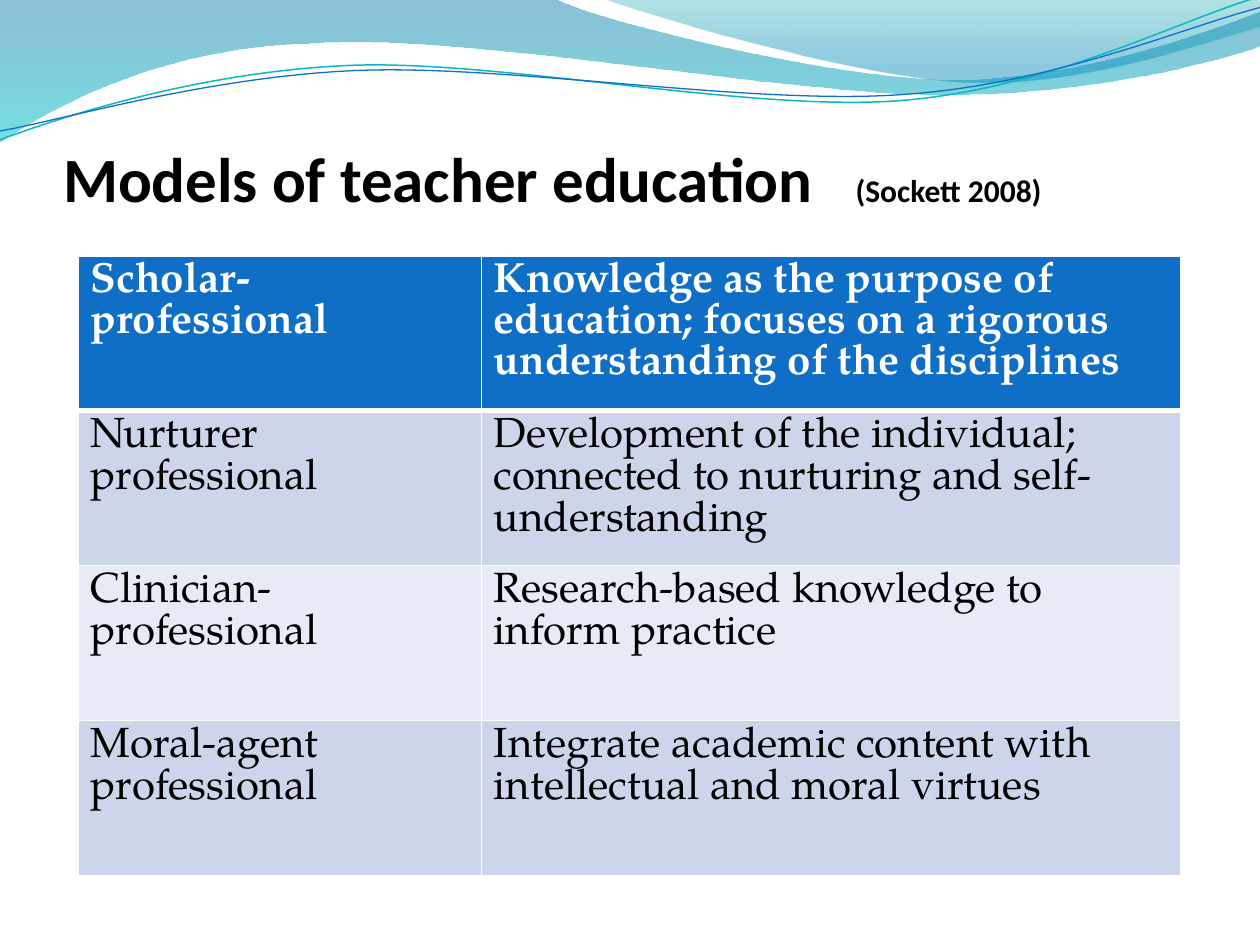
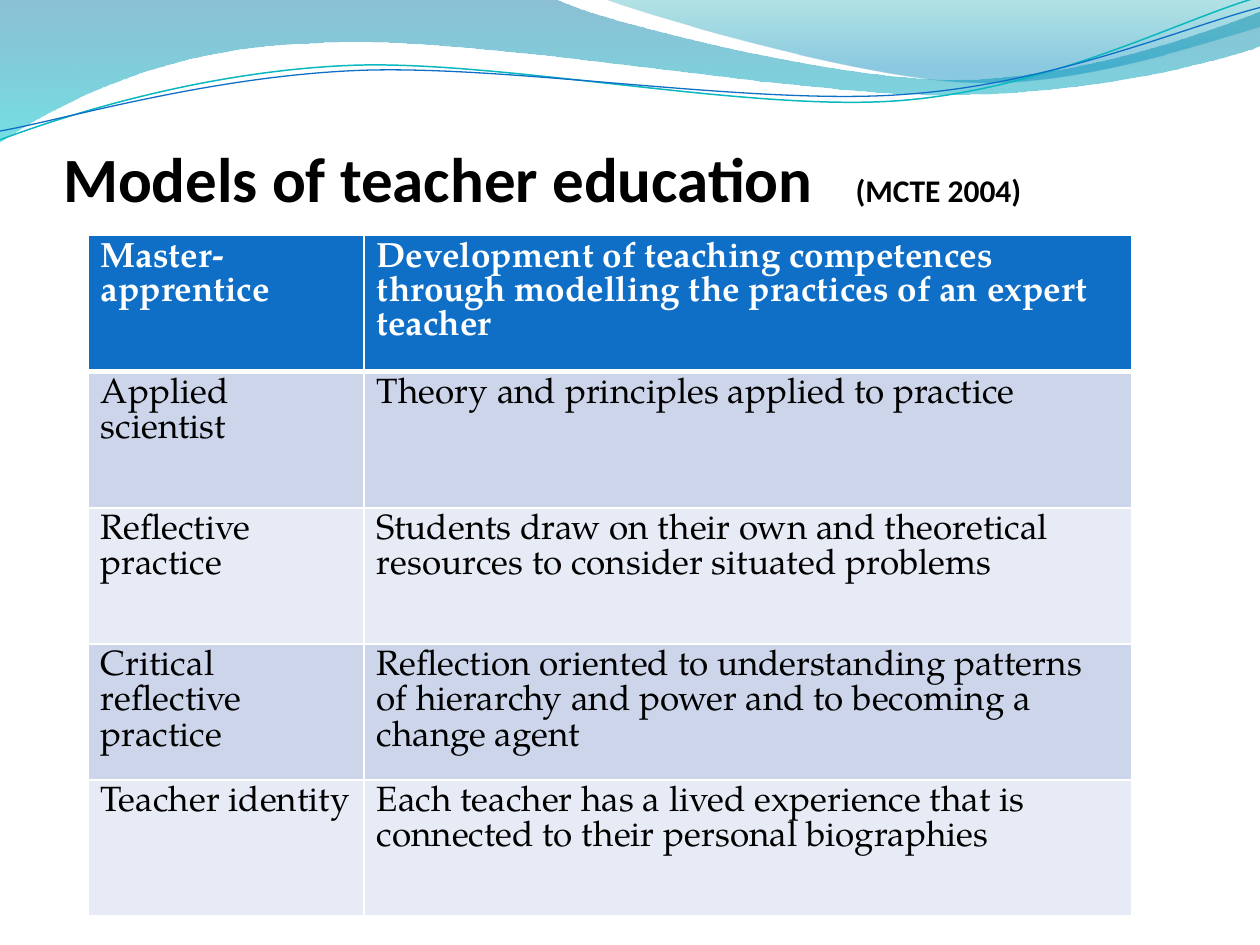
from lxml import etree
from pptx import Presentation, util as u
from pptx.dml.color import RGBColor
from pptx.enum import text as t
from pptx.oxml.ns import qn

PX = 9144  # EMU; 100 px to the inch

WHITE = RGBColor(0xFF, 0xFF, 0xFF)
BLACK = RGBColor(0, 0, 0)
BLUE = RGBColor(0x0F, 0x6F, 0xC6)
TEAL = RGBColor(0x0A, 0xB8, 0xBF)
BANDS = RGBColor(0xCC, 0xD5, 0xEA), RGBColor(0xE7, 0xEB, 0xF5)
DEEP = RGBColor(0, 0x74, 0xA1)
AQUA = RGBColor(0, 0xC6, 0xCF)
SEA = RGBColor(0, 0xA1, 0xA9)
SKY = RGBColor(0, 0x8B, 0xBF)

# Each part of an outline is one end point, or two handles and an end point.
BROAD = [
    [(0, 0)], [(440, -1)],
    [(476, 17), (664, 63), (758, 63)], [(853, 63), (958, 26), (1000, 9)],
    [(1001, 36)],
    [(983, 44), (870, 76), (746, 75)], [(622, 75), (382, 28), (257, 34)],
    [(129, 36), (46, 83), (-1, 113)], [(0, 0)],
]
RIGHT = [
    [(479, -1)],
    [(509, 11), (682, 62), (769, 65)], [(856, 69), (961, 32), (1000, 21)],
    [(1000, 0)], [(479, -1)],
]
UPPER = [
    [(0, 111)],
    [(48, 93), (158, 57), (277, 52)], [(395, 47), (593, 89), (713, 80)],
    [(833, 71), (938, 15), (998, -2)],
]
LOWER = [
    [(0, 104)],
    [(47, 96), (164, 61), (283, 56)], [(403, 51), (597, 84), (717, 75)],
    [(836, 67), (941, 21), (1000, 6)],
]

SOCKETT = [
    ("Scholar-professional",
     "Knowledge as the purpose of education; focuses on a rigorous "
     "understanding of the disciplines"),
    ("Nurturer professional",
     "Development of the individual; connected to nurturing and "
     "self-understanding"),
    ("Clinician-professional", "Research-based knowledge to inform practice"),
    ("Moral-agent professional",
     "Integrate academic content with intellectual and moral virtues"),
]
MCTE = [
    ("Master-apprentice",
     "Development of teaching competences through modelling the practices "
     "of an expert teacher"),
    ("Applied scientist", "Theory and principles applied to practice"),
    ("Reflective practice",
     "Students draw on their own and theoretical resources to consider "
     "situated problems"),
    ("Critical reflective practice",
     "Reflection oriented to understanding patterns of hierarchy and power "
     "and to becoming a change agent"),
    ("Teacher identity",
     "Each teacher has a lived experience that is connected to their "
     "personal biographies"),
]


def bend(shape, parts):
    """Turn the straight segments that have handles into cubic curves."""
    lines = list(shape.element.iter(qn("a:lnTo")))
    for line, part in zip(lines, parts[1:]):
        if len(part) == 3:
            curve = etree.Element(qn("a:cubicBezTo"))
            for x, y in part:
                etree.SubElement(curve, qn("a:pt"),
                                 x=str(x * PX - shape.left),
                                 y=str(y * PX - shape.top))
            line.getparent().replace(line, curve)


def write(par, words, size=18, font="Calibri", color=BLACK, bold=False):
    run = par.add_run()
    run.text = words
    run.font.size = u.Pt(size)
    run.font.name = font
    run.font.color.rgb = color
    run.font.bold = bold


def edge(cell, widths):
    """Draw white borders: left, right, top, bottom, in points."""
    props = cell._tc.get_or_add_tcPr()
    for i, (side, width) in enumerate(zip("LRTB", widths)):
        line = etree.Element(qn(f"a:ln{side}"), w=str(u.Pt(width)))
        fill = etree.SubElement(line, qn("a:solidFill"))
        etree.SubElement(fill, qn("a:srgbClr"), val=str(WHITE))
        props.insert(i, line)


class Deck:
    def __init__(self):
        self.prs = Presentation()
        self.prs.slide_width = 1000 * PX
        self.prs.slide_height = 750 * PX
        self.base = self.prs.slide_layouts[5]
        self.count = 0

    def page(self):
        self.slide = self.prs.slides.add_slide(self.base)

    def wave(self, parts, stops=None, line=None):
        """Draw an outline and move it to the shared layout."""
        first, *rest = [part[-1] for part in parts]
        form = self.slide.shapes.build_freeform(*first, scale=PX)
        form.add_line_segments(rest, close=bool(stops))
        shape = form.convert_to_shape()
        outline = next(shape.element.iter(qn("a:path")))
        outline.set("w", str(shape.width))
        outline.set("h", str(shape.height))
        for spot in outline.iter(qn("a:pt")):
            for axis in "xy":
                spot.set(axis, str(int(spot.get(axis)) * PX))
        bend(shape, parts)
        shape.shadow.inherit = False
        if stops:
            shape.line.fill.background()
            shape.fill.gradient()
            shape.fill.gradient_angle = 270
            for stop, (place, color, alpha) in zip(shape.fill.gradient_stops,
                                                   stops):
                stop.position = place / 100
                stop.color.rgb = color
            tints = shape.element.spPr.iter(qn("a:srgbClr"))
            for tint, (place, color, alpha) in zip(tints, stops):
                etree.SubElement(tint, qn("a:alpha"), val=str(alpha * 1000))
        else:
            shape.fill.background()
            shape.line.color.rgb, width = line
            shape.line.width = u.Pt(width)
        self.base.shapes.element.insert(2 + self.count, shape.element)
        self.count += 1

    def title(self, words, source):
        box = self.slide.shapes.title
        box.left, box.top, box.width, box.height = (
            v * PX for v in (50, 76, 900, 95))
        frame = box.text_frame
        frame.auto_size = t.MSO_AUTO_SIZE.NONE
        frame.word_wrap = True
        frame.vertical_anchor = t.MSO_ANCHOR.BOTTOM
        frame.margin_left = frame.margin_right = frame.margin_bottom = 0
        frame.margin_top = 5 * PX
        par = frame.paragraphs[0]
        par.alignment = t.PP_ALIGN.LEFT
        tabs = etree.SubElement(par._p.get_or_add_pPr(), qn("a:tabLst"))
        etree.SubElement(tabs, qn("a:tab"), pos=str(629 * PX), algn="l")
        write(par, words + "\t", size=36, bold=True)
        write(par, source, bold=True)

    def table(self, rows, left, top, cols, high, size):
        frame = self.slide.shapes.add_table(
            len(rows), len(cols), left * PX, top * PX,
            sum(cols) * PX, high * len(rows) * PX)
        grid = frame.table
        for col, wide in zip(grid.columns, cols):
            col.width = wide * PX
        for r, row in enumerate(rows):
            head = r == 0
            for c, words in enumerate(row):
                cell = grid.cell(r, c)
                cell.fill.solid()
                cell.fill.fore_color.rgb = BLUE if head else BANDS[(r - 1) % 2]
                edge(cell, (1, 1, 1, 3 if head else 1))
                write(cell.text_frame.paragraphs[0], words, size=size,
                      font="TeX Gyre Pagella", bold=head,
                      color=WHITE if head else BLACK)


def main():
    deck = Deck()
    deck.page()
    deck.wave(BROAD, stops=[(0, DEEP, 45), (100, AQUA, 55)])
    deck.wave(RIGHT, stops=[(0, SEA, 30), (80, SKY, 45)])
    deck.wave(UPPER, line=(TEAL, 0.85))
    deck.wave(LOWER, line=(BLUE, 0.75))
    deck.title("Models of teacher education", "(Sockett 2008)")
    deck.table(SOCKETT, 62, 203, (320, 555), high=123, size=24)

    deck.page()
    deck.title("Models of teacher education", "(MCTE 2004)")
    deck.table(MCTE, 70, 187, (219, 609), high=108, size=20)
    deck.prs.save("out.pptx")


if __name__ == "__main__":
    main()
